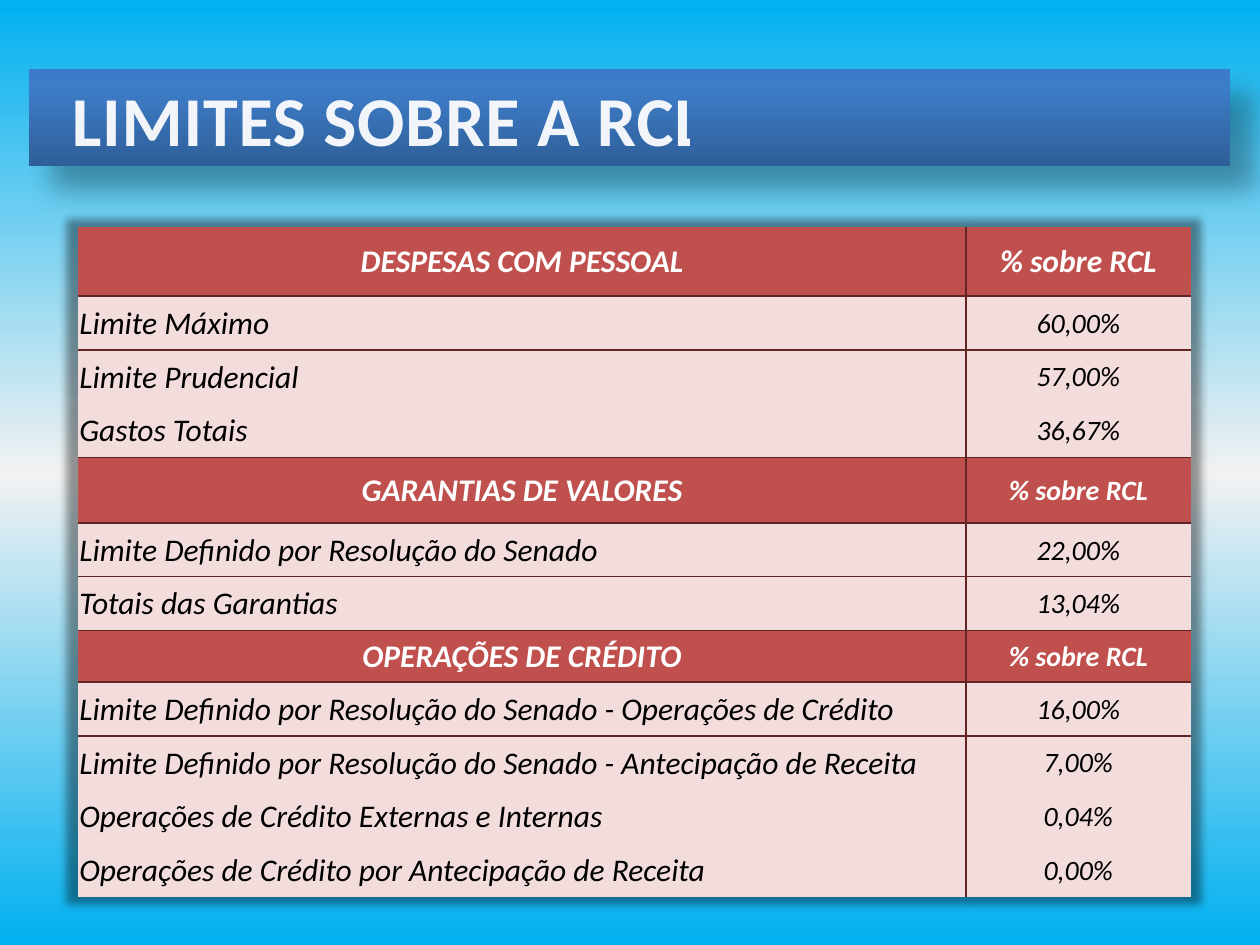
from lxml import etree
from pptx import Presentation
from pptx.dml.color import RGBColor
from pptx.enum.shapes import MSO_SHAPE
from pptx.enum.text import MSO_ANCHOR, MSO_AUTO_SIZE, PP_ALIGN
from pptx.oxml import parse_xml
from pptx.oxml.ns import nsdecls, qn
from pptx.util import Inches, Pt

FONT = "Calibri"
SKY = RGBColor(0x00, 0xB0, 0xF0)
PALE = RGBColor(0xF2, 0xF2, 0xF2)
BANNER_STOPS = [(0, RGBColor(0x2F, 0x5F, 0x99)), (80, RGBColor(0x3D, 0x7C, 0xC7)),
                (100, RGBColor(0x3A, 0x7C, 0xCB))]
TITLE_COLOR = RGBColor(0xFC, 0xFC, 0xFD)
TITLE_OUTLINE = RGBColor(0x10, 0x1A, 0x26)
HEADING_FILL = RGBColor(0xC0, 0x50, 0x4D)
ROW_FILL = RGBColor(0xF2, 0xDD, 0xDC)
BORDER = RGBColor(0x63, 0x25, 0x23)
WHITE = RGBColor(0xFF, 0xFF, 0xFF)
BLACK = RGBColor(0x00, 0x00, 0x00)
NO_TABLE_STYLE = "{2D5ABB26-0587-4C30-8999-92F81FD0307C}"

ROW_HEIGHT = 0.427
VALUE_COLUMN = 0.202  # share of the table's width
SECTIONS = [
    ("DESPESAS COM PESSOAL", 0.55, 18,
     [("Limite Máximo", "60,00%"), ("Limite Prudencial", "57,00%"),
      ("Gastos Totais", "36,67%")]),
    ("GARANTIAS DE VALORES", 0.52, 16,
     [("Limite Definido por Resolução do Senado", "22,00%"),
      ("Totais das Garantias", "13,04%")]),
    ("OPERAÇÕES DE CRÉDITO", 0.41, 16,
     [("Limite Definido por Resolução do Senado - Operações de Crédito", "16,00%"),
      ("Limite Definido por Resolução do Senado - Antecipação de Receita", "7,00%"),
      ("Operações de Crédito Externas e Internas", "0,04%"),
      ("Operações de Crédito por Antecipação de Receita", "0,00%")]),
]


def gradient(stops):
    """Return a gradient fill that runs from bottom to top."""
    marks = "".join(f'<a:gs pos="{share * 1000}"><a:srgbClr val="{color}"/></a:gs>'
                    for share, color in stops)
    return parse_xml(f'<a:gradFill {nsdecls("a")} rotWithShape="1"><a:gsLst>{marks}</a:gsLst>'
                     '<a:lin ang="16200000" scaled="0"/></a:gradFill>')


def shadow(alpha, blur, distance=0, angle=0, scale=100, align="ctr"):
    """Return a black outer shadow; alpha and scale are percentages."""
    return parse_xml(
        f'<a:effectLst {nsdecls("a")}><a:outerShdw blurRad="{Pt(blur)}" dist="{Pt(distance)}" '
        f'dir="{angle * 60000}" sx="{scale * 1000}" sy="{scale * 1000}" algn="{align}" '
        f'rotWithShape="0"><a:srgbClr val="{BLACK}"><a:alpha val="{alpha * 1000}"/>'
        '</a:srgbClr></a:outerShdw></a:effectLst>')


def line(tag, color, width, alpha=100):
    return parse_xml(f'<a:{tag} {nsdecls("a")} w="{Pt(width)}"><a:solidFill>'
                     f'<a:srgbClr val="{color}"><a:alpha val="{alpha * 1000}"/></a:srgbClr>'
                     f'</a:solidFill></a:{tag}>')


def write(text_frame, text, *, size, color, bold=False, italic=False, align=PP_ALIGN.LEFT):
    paragraph = text_frame.paragraphs[0]
    paragraph.alignment = align
    run = paragraph.add_run()
    run.text = text
    font = run.font
    font.name, font.size, font.bold, font.italic = FONT, Pt(size), bold, italic
    font.color.rgb = color
    return run


def paint_background(slide):
    slide.background.fill.solid()
    properties = slide.background._cSld.bg.bgPr
    solid = properties.find(qn("a:solidFill"))
    properties.replace(solid, gradient([(0, SKY), (50, PALE), (100, SKY)]))


def add_banner(slide, left, top, width, height):
    banner = slide.shapes.add_shape(MSO_SHAPE.RECTANGLE, left, top, width, height)
    banner.line.fill.background()
    banner.fill.solid()
    properties = banner._element.spPr
    properties.replace(properties.find(qn("a:solidFill")), gradient(BANNER_STOPS))
    properties.append(shadow(30, 15, distance=18, angle=45, align="tl"))


def place_title(slide, text, left, top, width, height):
    """Format the title placeholder and bring it in front of the banner."""
    title = slide.shapes.title
    title.left, title.top, title.width, title.height = left, top, width, height
    title._element.spPr.append(parse_xml(
        f'<a:prstGeom {nsdecls("a")} prst="flowChartAlternateProcess"><a:avLst/></a:prstGeom>'))
    frame = title.text_frame
    frame.auto_size = MSO_AUTO_SIZE.NONE
    frame.vertical_anchor = MSO_ANCHOR.MIDDLE
    run = write(frame, text, size=40, color=TITLE_COLOR, bold=True)
    properties = run.font._element
    properties.set("spc", "50")
    fill = properties.find(qn("a:solidFill"))
    etree.SubElement(fill[0], qn("a:alpha"), val="95000")
    fill.addprevious(line("ln", TITLE_OUTLINE, 1.06, alpha=6))
    fill.addnext(shadow(40, 3, distance=3, angle=45, align="tl"))
    slide.shapes._spTree.append(title._element)


def fill_cell(cell, text, fill, borders, **text_format):
    cell.margin_left = cell.margin_right = cell.margin_top = Inches(0.01)
    cell.margin_bottom = 0
    cell.vertical_anchor = MSO_ANCHOR.MIDDLE
    properties = cell._tc.get_or_add_tcPr()
    for tag in borders:
        properties.append(line(tag, BORDER, 1))
    cell.fill.solid()
    cell.fill.fore_color.rgb = fill
    write(cell.text_frame, text, italic=True, **text_format)


def add_limits_table(slide, sections, left, top, width):
    rows = []
    for heading, height, value_size, items in sections:
        rows.append((heading, "% sobre RCL", height, value_size, True))
        rows += [(label, value, ROW_HEIGHT, 16, False) for label, value in items]
    total = Inches(sum(row[2] for row in rows))
    table = slide.shapes.add_table(len(rows), 2, left, top, width, total).table
    table.first_row = table.horz_banding = False
    properties = table._tbl.tblPr
    properties.find(qn("a:tableStyleId")).text = NO_TABLE_STYLE
    properties.insert(0, shadow(40, 5, scale=102))
    table.columns[1].width = int(width * VALUE_COLUMN)
    table.columns[0].width = width - table.columns[1].width

    for index, (label, value, height, value_size, is_heading) in enumerate(rows):
        table.rows[index].height = Inches(height)
        above = index > 0 and (is_heading or rows[index - 1][4])
        below = index + 1 < len(rows) and (is_heading or rows[index + 1][4])
        edges = ["lnT"] * above + ["lnB"] * below
        fill = HEADING_FILL if is_heading else ROW_FILL
        style = {"color": WHITE if is_heading else BLACK, "bold": is_heading}
        label_align = PP_ALIGN.CENTER if is_heading else PP_ALIGN.LEFT
        fill_cell(table.cell(index, 0), label, fill, ["lnR"] + edges,
                  size=18, align=label_align, **style)
        fill_cell(table.cell(index, 1), value, fill, ["lnL"] + edges,
                  size=value_size, align=PP_ALIGN.CENTER, **style)


def main():
    presentation = Presentation()
    presentation.slide_width, presentation.slide_height = Inches(10), Inches(7.5)
    slide = presentation.slides.add_slide(presentation.slide_layouts[5])
    paint_background(slide)
    add_banner(slide, Inches(0.23), Inches(0.55), Inches(9.53), Inches(0.77))
    place_title(slide, "LIMITES SOBRE A RCL",
                Inches(0.47), Inches(0.55), Inches(9.3), Inches(0.78))
    add_limits_table(slide, SECTIONS, Inches(0.62), Inches(1.8), Inches(8.83))
    presentation.save("out.pptx")


if __name__ == "__main__":
    main()
